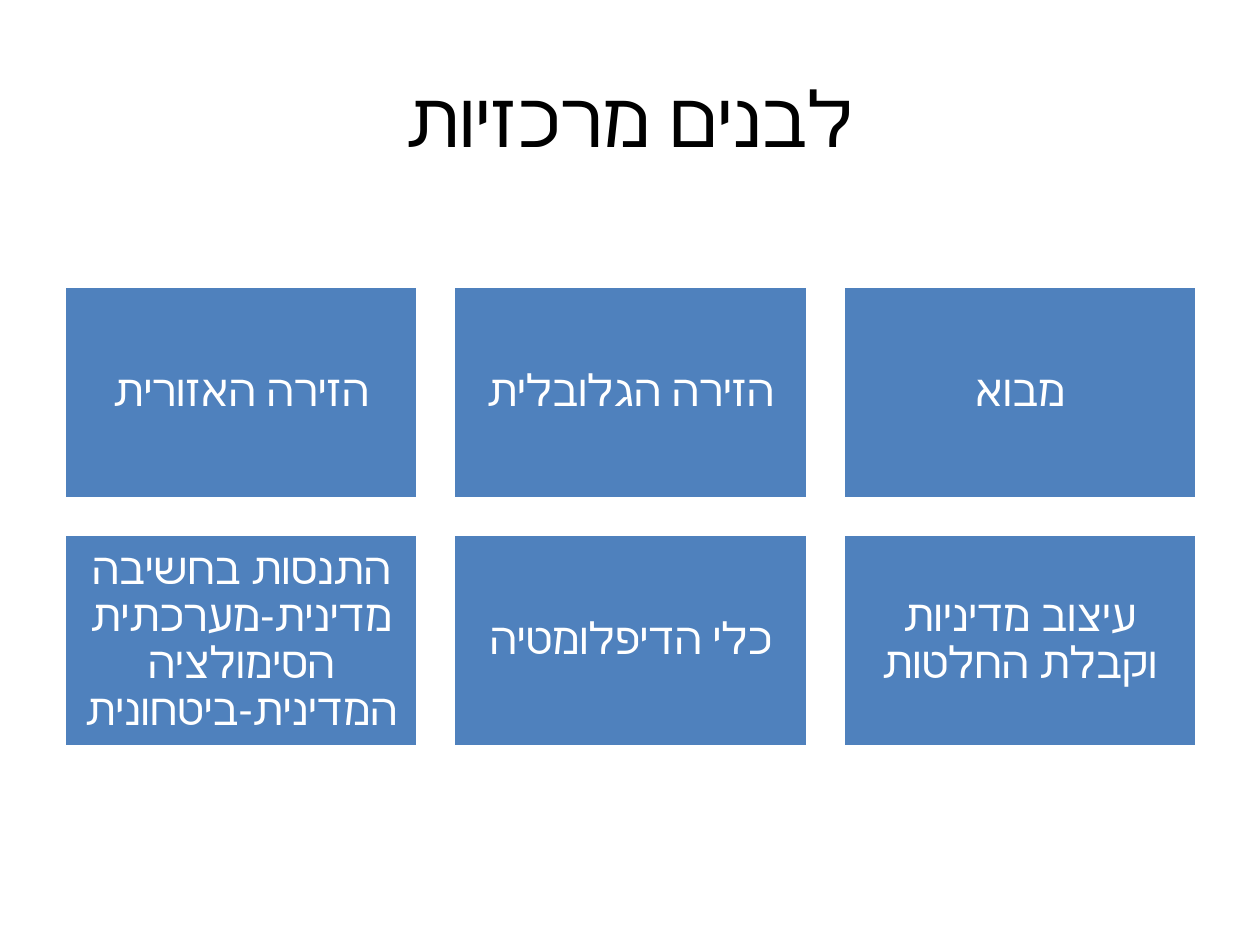
"""Build a slide with a title and a right-to-left grid of six topic cards."""
from pptx import Presentation
from pptx import util as u
from pptx.dml import color as c
from pptx.enum import shapes, text

COLORS = {"card": "4F81BD", "white": "FFFFFF", "title": "000000"}
TITLE = "לבנים מרכזיות"
TOPIC_ROWS = [
    ["מבוא", "הזירה הגלובלית", "הזירה האזורית"],
    [
        "עיצוב מדיניות וקבלת החלטות",
        "כלי הדיפלומטיה",
        "התנסות בחשיבה מדינית-מערכתית הסימולציה המדינית-ביטחונית",
    ],
]
CARD_WIDTH, CARD_HEIGHT, GAP = 2.81, 1.69, 0.28
RIGHT_CARD_LEFT, GRID_TOP = 6.69, 2.27


class SlideBuilder:
    """Hold the style and the current slide."""

    font = "Calibri"

    def __init__(self, page):
        self.page = page

    def color(self, name):
        """Look up a named colour."""
        return c.RGBColor.from_string(COLORS[name])

    def label(self, box, wording, size, color, line_spacing=1.0):
        """Put centred right-to-left text in a box."""
        frame = box.text_frame
        frame.text = wording
        frame.word_wrap = True
        frame.vertical_anchor = text.MSO_ANCHOR.MIDDLE
        para = frame.paragraphs[0]
        para.alignment = text.PP_ALIGN.CENTER
        para.line_spacing = line_spacing
        para._p.get_or_add_pPr().set("rtl", "1")
        span = para.runs[0]
        span.font.name = self.font
        span.font.size = u.Pt(size)
        span.font.color.rgb = self.color(color)

    def title(self, wording, left, top, width, height):
        """Add the slide title."""
        box = self.page.shapes.add_textbox(
            u.Inches(left), u.Inches(top), u.Inches(width), u.Inches(height)
        )
        self.label(box, wording, 44, "title")

    def card(self, wording, left, top):
        """Add a filled topic card."""
        box = self.page.shapes.add_shape(
            shapes.MSO_SHAPE.RECTANGLE,
            u.Inches(left), u.Inches(top),
            u.Inches(CARD_WIDTH), u.Inches(CARD_HEIGHT),
        )
        box.shadow.inherit = False
        box.fill.solid()
        box.fill.fore_color.rgb = self.color("card")
        box.line.color.rgb = self.color("white")
        box.line.width = u.Pt(2)
        frame = box.text_frame
        frame.margin_left = frame.margin_right = u.Inches(0.1)
        frame.margin_top = frame.margin_bottom = u.Inches(0.1)
        self.label(box, wording, 25, "white", line_spacing=0.9)


def main():
    """Create and save the deck."""
    deck = Presentation()
    deck.slide_width, deck.slide_height = u.Inches(10), u.Inches(7.5)
    builder = SlideBuilder(deck.slides.add_slide(deck.slide_layouts[6]))
    builder.title(TITLE, 0.5, 0.3, 9, 1.25)
    for row, topics in enumerate(TOPIC_ROWS):
        for column, topic in enumerate(topics):
            left = RIGHT_CARD_LEFT - column * (CARD_WIDTH + GAP)
            builder.card(topic, left, GRID_TOP + row * (CARD_HEIGHT + GAP))
    deck.save("out.pptx")


if __name__ == "__main__":
    main()
